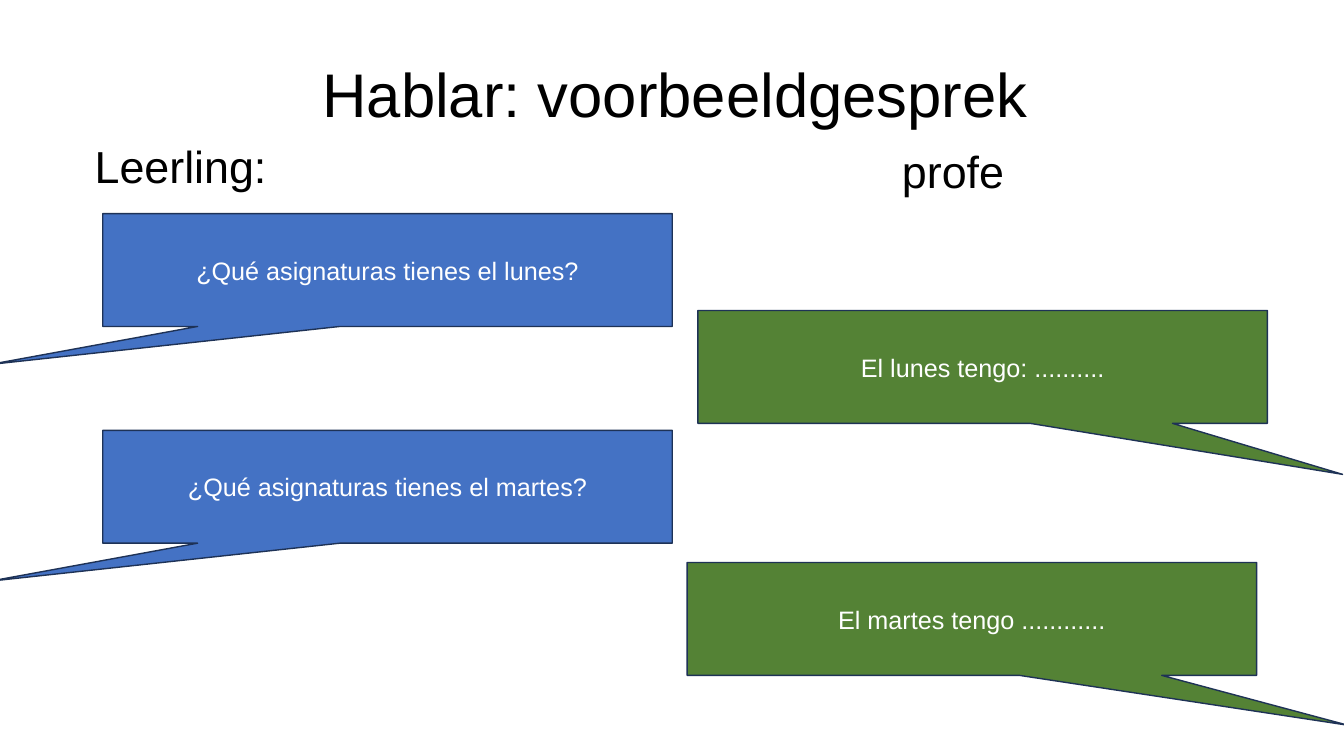
from pptx import Presentation
from pptx.dml.color import RGBColor
from pptx.enum.shapes import MSO_SHAPE
from pptx.enum.text import MSO_ANCHOR, PP_ALIGN
from pptx.util import Pt

CALLOUT = MSO_SHAPE.RECTANGULAR_CALLOUT
TOP, MIDDLE = MSO_ANCHOR.TOP, MSO_ANCHOR.MIDDLE
LEFT, CENTER = PP_ALIGN.LEFT, PP_ALIGN.CENTER

COLORS = {
    "text": "000000",
    "bubble_text": "FFFFFF",
    "pupil": "4472C4",
    "teacher": "548235",
    "outline": "1E3256",
}
FONT = "Arial"
BUBBLE_WIDTH, BUBBLE_HEIGHT = 406.8, 80.6
PUPIL_LEFT = 73.4


def color(name):
    return RGBColor.from_string(COLORS[name])


def write(shape, words, size, color_name, align, anchor):
    frame = shape.text_frame
    frame.word_wrap = True
    frame.vertical_anchor = anchor
    line = frame.paragraphs[0]
    line.text = words
    line.alignment = align
    line.font.name = FONT
    line.font.size = Pt(size)
    line.font.color.rgb = color(color_name)
    return line


def add_heading(slide, box, words, size, anchor=TOP):
    heading = slide.shapes.add_textbox(*map(Pt, box))
    return write(heading, words, size, "text", LEFT, anchor)


def add_bubble(slide, left, top, words, speaker, tail):
    bubble = slide.shapes.add_shape(
        CALLOUT, Pt(left), Pt(top), Pt(BUBBLE_WIDTH), Pt(BUBBLE_HEIGHT))
    bubble.shadow.inherit = False
    bubble.adjustments[0], bubble.adjustments[1] = tail
    bubble.fill.solid()
    bubble.fill.fore_color.rgb = color(speaker)
    bubble.line.color.rgb = color("outline")
    bubble.line.width = Pt(1)
    write(bubble, words, 18, "bubble_text", CENTER, MIDDLE)


def add_conversation_slide(deck):
    slide = deck.slides.add_slide(deck.slide_layouts[6])

    # Title and speaker headings
    title = add_heading(slide, (223.2, 17.3, 828, 104.4),
                        "Hablar: voorbeeldgesprek", 44, MIDDLE)
    title.line_spacing = 0.9
    add_heading(slide, (60.5, 95.8, 173.5, 46), "Leerling:", 32)
    add_heading(slide, (637.2, 99.4, 173.5, 46), "profe", 32)

    # Pupil's questions
    pupil_tail = (-0.698, 0.837)
    for top, day in ((152.6, "lunes"), (307.4, "martes")):
        add_bubble(slide, PUPIL_LEFT, top,
                   f"¿Qué asignaturas tienes el {day}?", "pupil", pupil_tail)

    # Teacher's answers
    add_bubble(slide, 498.5, 221.8, "El lunes tengo: ..........",
               "teacher", (0.632, 0.952))
    add_bubble(slide, 490.8, 401.8, "El martes tengo ............",
               "teacher", (0.66, 0.942))


def main():
    deck = Presentation()
    deck.slide_width, deck.slide_height = Pt(960), Pt(540)
    add_conversation_slide(deck)
    deck.save("out.pptx")


if __name__ == "__main__":
    main()
